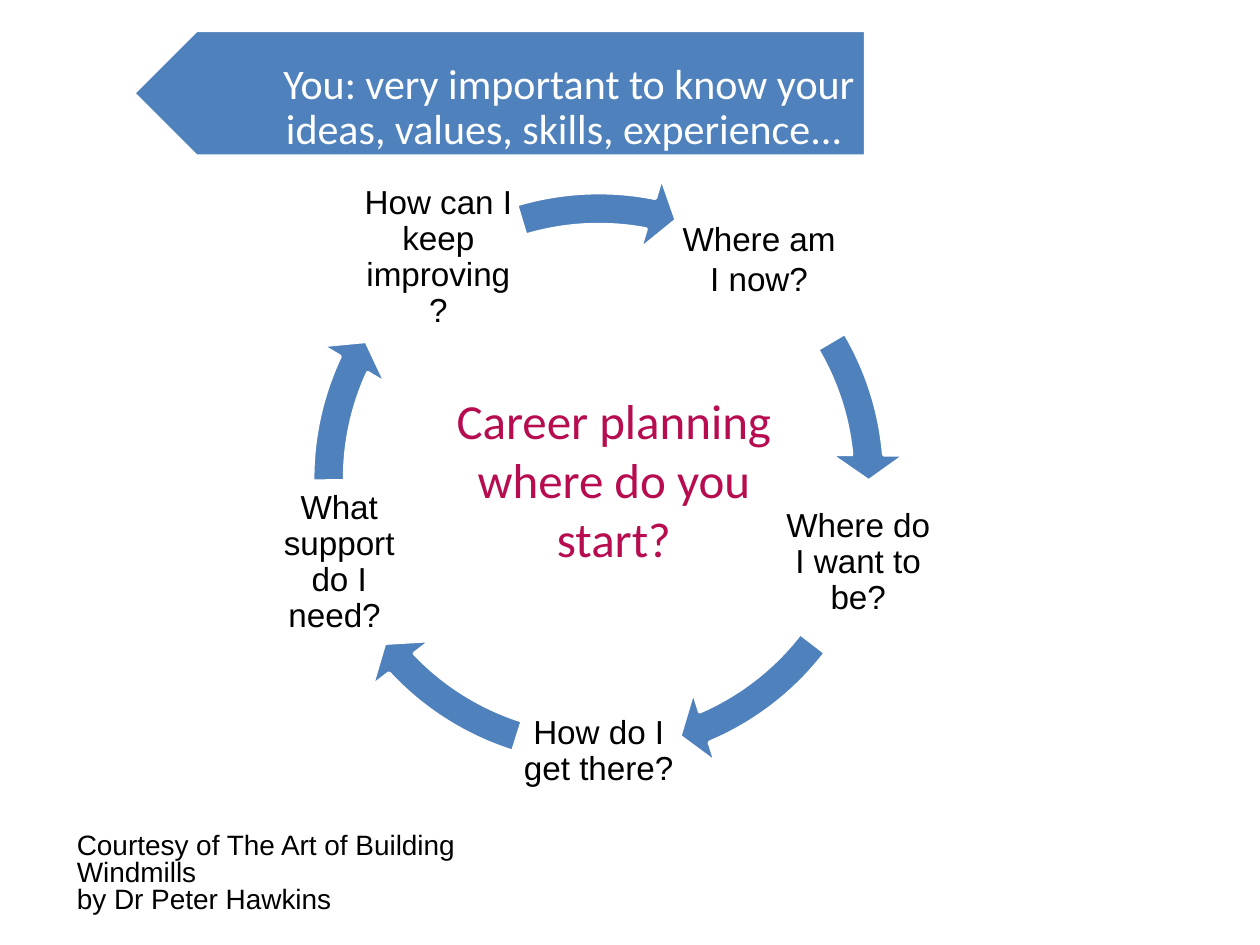
from dataclasses import dataclass
from math import cos, radians, sin

from pptx import Presentation
from pptx import util as u
from pptx.dml.color import RGBColor
from pptx.enum import shapes, text

COLORS = {"blue": "4F81BD", "white": "FFFFFF", "black": "000000", "crimson": "B70D50"}
CENTER = (12.07, 9.65)
LABEL_RADIUS, LABEL_SIZE, RING_SIZE = 5.5, 3.3, 12.4


@dataclass
class Label:
    """A text box, with lengths in centimetres."""
    words: str
    box: tuple
    size: int
    font: str = "Arial"
    color: str = "black"
    spacing: float = 0.9
    align: text.PP_ALIGN = text.PP_ALIGN.CENTER
    anchor: text.MSO_ANCHOR = text.MSO_ANCHOR.MIDDLE
    insets: tuple = (0.08, 0.08, 0.08, 0.08)


@dataclass
class Step:
    """A question on the ring and the arrow that follows it, in degrees."""
    question: str
    start: float
    end: float
    spacing: float = 0.9


STEPS = [
    Step("Where am I now?", 329.43, 354.9, 1.0),
    Step("Where do I want to be?", 37.54, 66.93),
    Step("How do I get there?", 107.48, 136.86),
    Step("What support do I need? ", 179.5, 204.98),
    Step("How can I keep improving?", 253.3, 281.11),
]

CAREER = Label("Career planning where do you start?", (8.69, 7.67, 7.37, 3.96), 28,
               "Calibri", "crimson", 1.0, insets=(0.25, 0.13, 0.25, 0.13))
CREDIT = Label("Courtesy of The Art of Building Windmills \nby Dr Peter Hawkins",
               (1.3, 16.69, 10.49, 1.63), 16, spacing=0.8, align=text.PP_ALIGN.LEFT,
               anchor=text.MSO_ANCHOR.TOP, insets=(0.25, 0.13, 0.25, 0.13))
ADVICE = Label("You: very important to know your ideas, values, skills, experience... ",
               (4.14, 0.91, 14.25, 2.54), 24, "Calibri", "white",
               insets=(0.89, 0.25, 0.48, 0.25))


def set_format(target, values: dict) -> None:
    """Set each named attribute on the target."""
    for name, value in values.items():
        setattr(target, name, value)


def add_label(s, label: Label) -> None:
    """Add a wrapped text box."""
    tf = s.shapes.add_textbox(*map(u.Cm, label.box)).text_frame
    sides = ("margin_left", "margin_top", "margin_right", "margin_bottom")
    set_format(tf, {"word_wrap": True, "vertical_anchor": label.anchor,
                    **dict(zip(sides, map(u.Cm, label.insets)))})
    p = tf.paragraphs[0]
    p.text = label.words
    set_format(p, {"alignment": label.align, "line_spacing": label.spacing})
    for r in p.runs:
        set_format(r.font, {"size": u.Pt(label.size), "name": label.font})
        r.font.color.rgb = RGBColor.from_string(COLORS[label.color])


def add_block(s, kind: shapes.MSO_SHAPE, box: tuple, adjustments: tuple, rotation: int = 0) -> None:
    """Add a blue preset shape with a white outline."""
    sp = s.shapes.add_shape(kind, *map(u.Cm, box))
    set_format(sp, {"rotation": rotation})
    sp.shadow.inherit = False
    sp.fill.solid()
    sp.fill.fore_color.rgb = RGBColor.from_string(COLORS["blue"])
    sp.line.color.rgb = RGBColor.from_string(COLORS["white"])
    sp.line.width = u.Pt(2)
    for i, value in enumerate(adjustments):
        sp.adjustments[i] = value


def centered_square(x: float, y: float, size: float) -> tuple:
    """Return the box of a square around a point."""
    return x - size / 2, y - size / 2, size, size


def add_cycle(s) -> None:
    """Place the questions evenly round the ring, each with its arrow."""
    for i, step in enumerate(STEPS):
        angle = radians(-54 + i * 360 / len(STEPS))
        x = CENTER[0] + LABEL_RADIUS * cos(angle)
        y = CENTER[1] + LABEL_RADIUS * sin(angle)
        add_label(s, Label(step.question, centered_square(x, y, LABEL_SIZE), 19,
                           spacing=step.spacing))
        add_block(s, shapes.MSO_SHAPE.CIRCULAR_ARROW, centered_square(*CENTER, RING_SIZE),
                  (0.052, 3.357, step.end * 0.6, step.start * 0.6, 0.061))


def main() -> None:
    """Build the career planning slide."""
    prs = Presentation()
    set_format(prs, {"slide_width": u.Cm(25.4), "slide_height": u.Cm(19.05)})
    s = prs.slides.add_slide(prs.slide_layouts[6])
    add_label(s, CAREER)
    add_label(s, CREDIT)
    add_cycle(s)
    add_block(s, shapes.MSO_SHAPE.PENTAGON, (2.69, 0.61, 14.76, 2.54), (0.5,), 180)
    add_label(s, ADVICE)
    prs.save("out.pptx")


if __name__ == "__main__":
    main()
